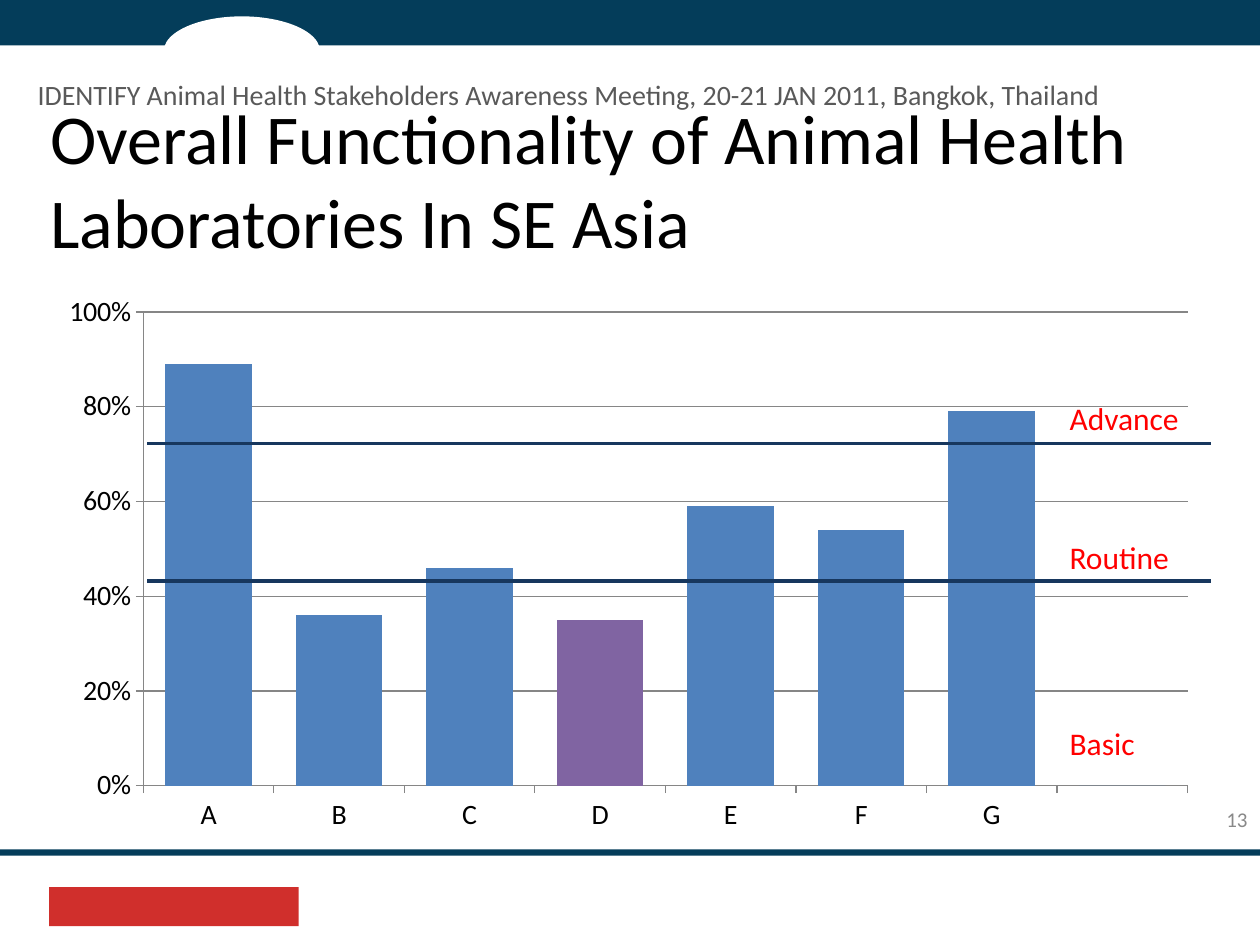
from collections import namedtuple

from lxml import etree
from pptx import Presentation
from pptx.chart.data import CategoryChartData
from pptx.dml.color import RGBColor
from pptx.enum.chart import XL_CHART_TYPE as CHART, XL_TICK_MARK as TICK
from pptx.enum.shapes import MSO_CONNECTOR as LINE, MSO_SHAPE as SHAPE
from pptx.enum.text import MSO_ANCHOR as ANCHOR, PP_ALIGN as ALIGN
from pptx.oxml import parse_xml
from pptx.oxml.ns import nsdecls, qn
from pptx.util import Inches, Pt

# The slide is a grid of 100 columns by 75 rows.
COLS, ROWS = 100, 75
NAVY, RED, BLUE, PURPLE = "043D5A", "FF0000", "4F81BD", "8064A2"
Box = namedtuple("Box", "x y w h")


def grid(n):
    return Inches(n / 10)


def rgb(value):
    return RGBColor.from_string(value)


def within(box, x, y, w, h):
    """Box at an offset from the corner of another box."""
    return Box(box.x + x, box.y + y, w, h)


def add_block(slide, kind, box, color):
    sp = slide.shapes.add_shape(kind, *map(grid, box))
    sp.shadow.inherit = False
    sp.fill.solid()
    sp.fill.fore_color.rgb = rgb(color)
    sp.line.fill.background()


def add_text(slide, box, text, size, color, align=ALIGN.LEFT,
             anchor=ANCHOR.TOP, wrap=False):
    tf = slide.shapes.add_textbox(*map(grid, box)).text_frame
    tf.word_wrap = wrap
    tf.vertical_anchor = anchor
    p = tf.paragraphs[0]
    p.alignment = align
    r = p.add_run()
    r.text = text
    r.font.size, r.font.name = Pt(size), "Calibri"
    r.font.color.rgb = rgb(color)


def add_frame(slide, box):
    add_block(slide, SHAPE.RECTANGLE, within(box, 0, -0.3, box.w + 0.4, 3.9), NAVY)
    add_block(slide, SHAPE.OVAL, within(box, 13, 1.3, 12.4, 5.5), "FFFFFF")
    add_block(slide, SHAPE.RECTANGLE, within(box, 0, 67.4, box.w, 0.5), NAVY)
    add_block(slide, SHAPE.RECTANGLE, within(box, 3.9, 70.4, 19.8, 3.1), "D02F2C")
    add_text(slide, within(box, 76.7, 63, 23.3, 4), "13", 12, "898989",
             align=ALIGN.RIGHT, anchor=ANCHOR.MIDDLE, wrap=True)


def add_heading(slide, box):
    add_text(slide, within(box, 1, 1.3, 91, 14.4),
             "Overall Functionality of Animal Health Laboratories In SE Asia",
             40, "000000", wrap=True)
    add_text(slide, within(box, 0, 0, 87.9, 3.7),
             "IDENTIFY Animal Health Stakeholders Awareness Meeting, "
             "20-21 JAN 2011, Bangkok, Thailand", 16, "595959")


def fix_plot_area(chart, **shares):
    layout = parse_xml(f'<c:layout {nsdecls("c")}><c:manualLayout/></c:layout>')
    manual = layout[0]
    settings = {"layoutTarget": "inner", "xMode": "edge", "yMode": "edge", **shares}
    for tag, value in settings.items():
        etree.SubElement(manual, qn(f"c:{tag}")).set("val", str(value))
    plot_area = chart.plots[0]._element.getparent()
    for old in plot_area.findall(qn("c:layout")):
        plot_area.remove(old)
    plot_area.insert(0, layout)


def add_score_chart(slide, box):
    data = CategoryChartData(number_format="0%")
    data.categories = [*"ABCDEFG", ""]
    data.add_series("Series 1", (0.89, 0.36, 0.46, 0.35, 0.59, 0.54, 0.79, 0))
    chart = slide.shapes.add_chart(CHART.COLUMN_CLUSTERED, *map(grid, box), data).chart
    chart.has_legend = chart.has_title = False
    chart.font.size, chart.font.name = Pt(16), "Calibri"
    chart.font.color.rgb = rgb("000000")
    fix_plot_area(chart, x=0.083, y=0.051, w=0.897, h=0.845)

    plot = chart.plots[0]
    plot.gap_width, plot.vary_by_categories = 51, False
    series = plot.series[0]
    for part, color in ((series, BLUE), (series.points[3], PURPLE)):
        part.format.fill.solid()
        part.format.fill.fore_color.rgb = rgb(color)

    values = chart.value_axis
    values.minimum_scale, values.maximum_scale, values.major_unit = 0, 1, 0.2
    values.tick_labels.number_format = "0%"
    values.tick_labels.number_format_is_linked = False
    values.has_major_gridlines = True
    for axis in (values, chart.category_axis):
        axis.major_tick_mark = TICK.OUTSIDE
    for part in (values, chart.category_axis, values.major_gridlines):
        part.format.line.color.rgb = rgb("868686")
        part.format.line.width = Pt(0.75)


def add_levels(slide, box):
    """Level names and the thresholds between them, over the chart box."""
    for name, y, w in (("Advance", 8.7, 10.8), ("Routine", 19.7, 10), ("Basic", 34.5, 7.2)):
        add_text(slide, within(box, 80.2, y, w, 4), name, 18, RED)
    for y in (12.7, 23.6):
        level = box.y + y
        line = slide.shapes.add_connector(
            LINE.STRAIGHT, *map(grid, (box.x + 8, level, box.x + box.w, level)))
        line.line.color.rgb = rgb("17375E")
        line.line.width = Pt(2)
        etree.SubElement(line._element.spPr, qn("a:effectLst"))


def main():
    prs = Presentation()
    prs.slide_width, prs.slide_height = grid(COLS), grid(ROWS)
    slide = prs.slides.add_slide(prs.slide_layouts[6])
    chart_box = Box(3.7, 22.5, 92.4, 44.5)
    add_frame(slide, Box(0, 0, COLS, ROWS))
    add_score_chart(slide, chart_box)
    add_heading(slide, Box(2, 5.7, 92, 15.7))
    add_levels(slide, chart_box)
    prs.save("out.pptx")


if __name__ == "__main__":
    main()
